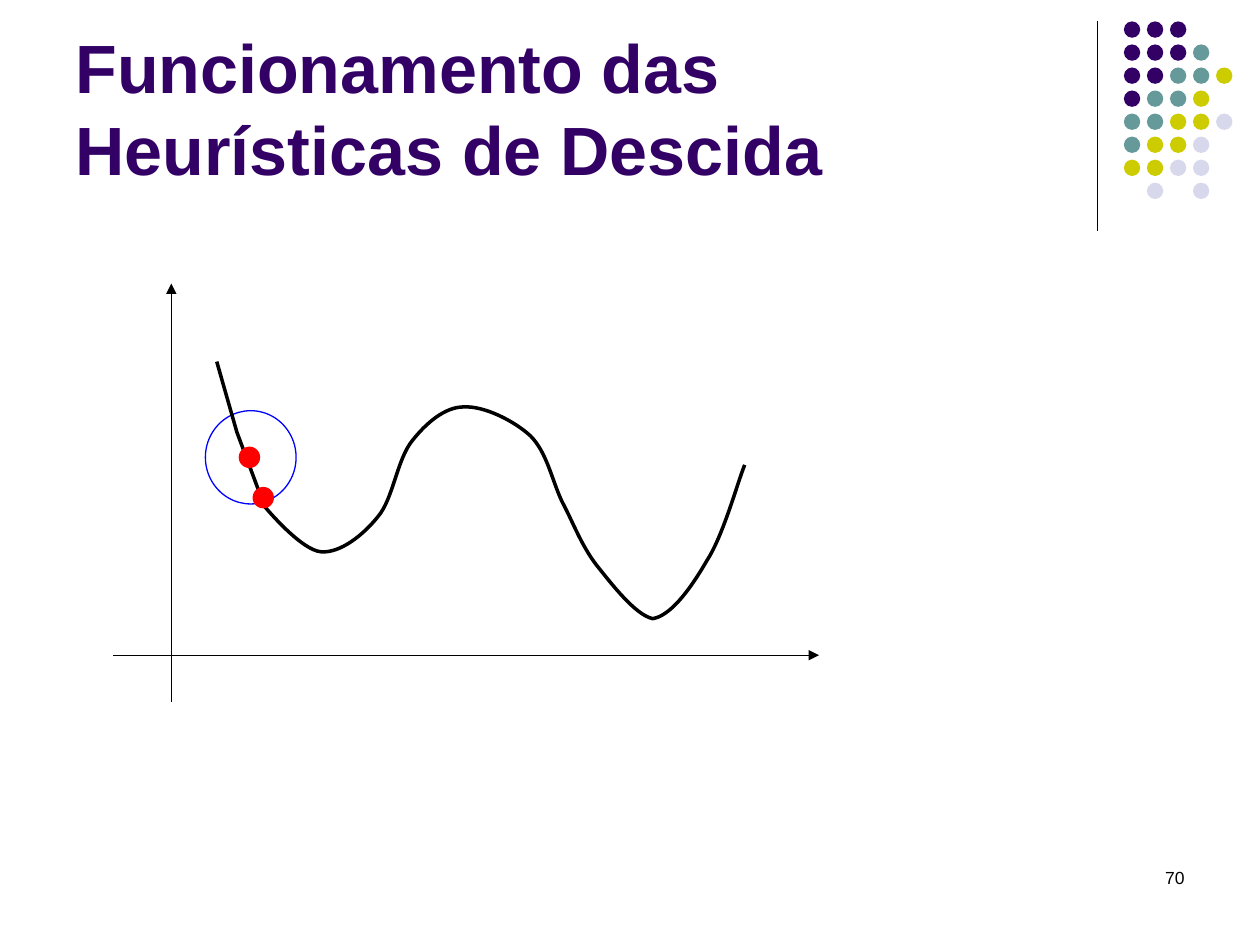
from lxml import etree
from pptx import Presentation
from pptx.dml.color import RGBColor
from pptx.enum.shapes import MSO_CONNECTOR, MSO_SHAPE
from pptx.enum.text import MSO_ANCHOR, PP_ALIGN
from pptx.oxml.ns import qn
from pptx.util import Inches, Pt

STRAIGHT = MSO_CONNECTOR.STRAIGHT
OVAL = MSO_SHAPE.OVAL
BOTTOM, TOP = MSO_ANCHOR.BOTTOM, MSO_ANCHOR.TOP
LEFT, RIGHT = PP_ALIGN.LEFT, PP_ALIGN.RIGHT


def color(value):
    return RGBColor.from_string(value)


def add_oval(left, top, width, height, fill, line=None):
    shape = slide.shapes.add_shape(
        OVAL, Inches(left), Inches(top), Inches(width), Inches(height))
    shape.shadow.inherit = False
    shape.fill.solid()
    shape.fill.fore_color.rgb = color(fill)
    if line:
        shape.line.color.rgb = color(line)
        shape.line.width = Pt(0.75)
    else:
        shape.line.fill.background()


presentation = Presentation()
presentation.slide_width = Inches(10)
presentation.slide_height = Inches(7.5)
slide = presentation.slides.add_slide(presentation.slide_layouts[6])

dot_colors = {"P": "330066", "T": "669999", "Y": "CCCC00", "L": "D8D8EC"}
dot_rows = ["PPP", "PPPT", "PPTTY", "PTTY", "TTYYL", "TYYL", "YYLL", " L L"]
dot_pitch = 1.28 / 7
for row, letters in enumerate(dot_rows):
    for column, letter in enumerate(letters):
        if letter in dot_colors:
            add_oval(8.92 + column * dot_pitch, 0.17 + row * dot_pitch,
                     0.13, 0.13, dot_colors[letter])

texts = [
    ((7.17, 6.83, 2.33, 0.5), "70", TOP, RIGHT,
     {"size": Pt(10), "bold": False}, "000000"),
    ((0.5, 0.13, 8.25, 1.42), "Funcionamento das \vHeurísticas de Descida",
     BOTTOM, LEFT, {"size": Pt(39), "bold": True}, "330066"),
]
for box, text, anchor, alignment, font_format, text_color in texts:
    frame = slide.shapes.add_textbox(*map(Inches, box)).text_frame
    frame.word_wrap = True
    frame.vertical_anchor = anchor
    paragraph = frame.paragraphs[0]
    paragraph.text = text
    paragraph.alignment = alignment
    for run in paragraph.runs:
        for name, value in {"name": "Arial", **font_format}.items():
            setattr(run.font, name, value)
        run.font.color.rgb = color(text_color)

add_oval(1.63, 3.26, 0.72, 0.74, "FFFFFF", "0000FF")

lines = [
    ((8.71, 0.17, 8.71, 1.83), False),
    ((1.36, 5.57, 1.36, 2.25), True),
    ((0.9, 5.2, 6.5, 5.2), True),
]
for ends, has_arrow in lines:
    connector = slide.shapes.add_connector(STRAIGHT, *map(Inches, ends))
    connector.line.color.rgb = color("000000")
    connector.line.width = Pt(0.75)
    if has_arrow:
        etree.SubElement(connector.line._get_or_add_ln(), qn("a:tailEnd"),
                         type="triangle")
    etree.SubElement(connector._element.spPr, qn("a:effectLst"))

start_x, start_y = 172, 287
curve_segments = [
    ((172, 287), (188, 343), (188, 343)),
    ((188, 343), (210, 402), (210, 402)),
    ((210, 402), (239, 437), (255, 438)),
    ((270, 439), (288, 425), (300, 410)),
    ((312, 396), (315, 365), (327, 350)),
    ((338, 336), (353, 323), (368, 323)),
    ((384, 322), (408, 334), (421, 346)),
    ((434, 359), (438, 381), (446, 398)),
    ((455, 415), (461, 432), (473, 448)),
    ((485, 463), (504, 488), (518, 491)),
    ((531, 489), (546, 471), (561, 445)),
    ((574, 425), (585, 384), (591, 369)),
]
builder = slide.shapes.build_freeform(start_x, start_y, scale=Inches(0.01))
builder.add_line_segments([segment[-1] for segment in curve_segments], close=False)
curve = builder.convert_to_shape()
for segment, straight in zip(curve_segments, list(curve._element.iter(qn("a:lnTo")))):
    bezier = etree.Element(qn("a:cubicBezTo"))
    for x, y in segment:
        etree.SubElement(bezier, qn("a:pt"), x=str(x - start_x), y=str(y - start_y))
    straight.getparent().replace(straight, bezier)
curve.shadow.inherit = False
curve.fill.background()
curve.line.color.rgb = color("000000")
curve.line.width = Pt(2)

for left, top in [(1.9, 3.55), (2.01, 3.87)]:
    add_oval(left, top, 0.16, 0.16, "FF0000", "FF0000")

presentation.save("out.pptx")
